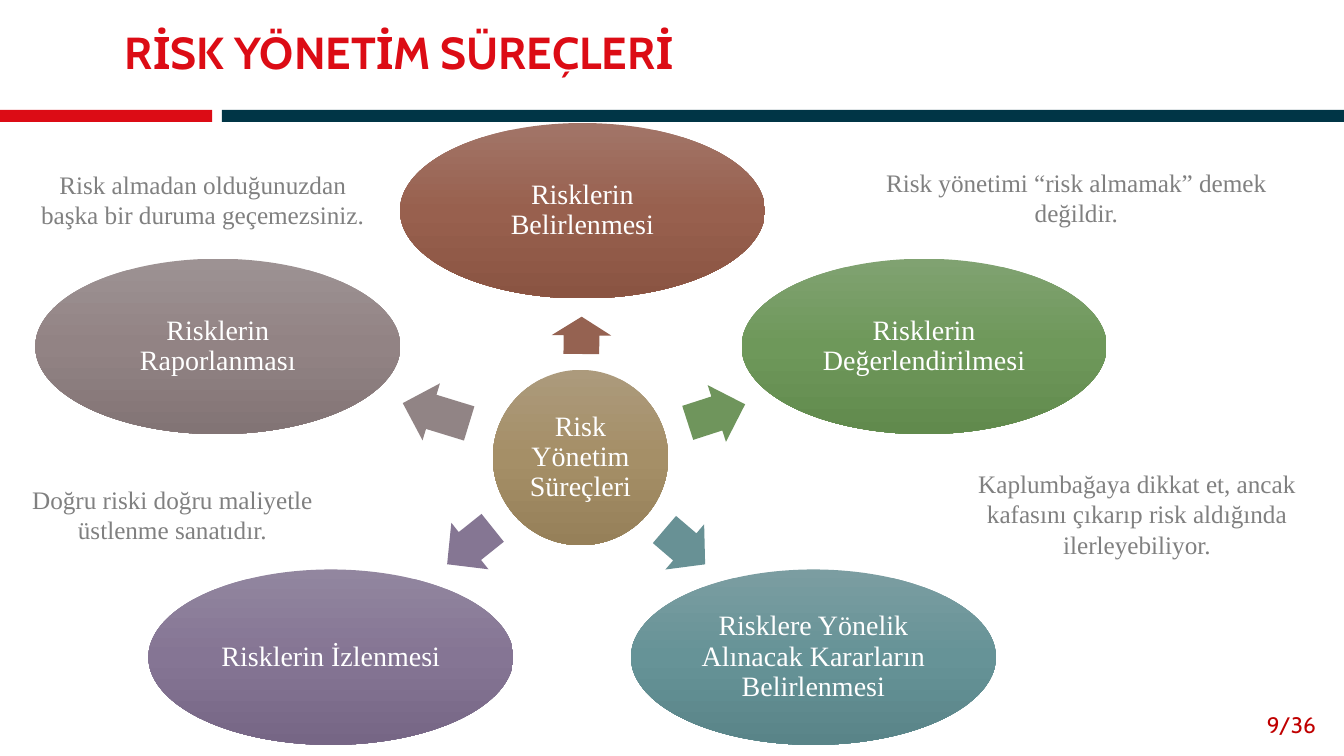
import copy
import math
from dataclasses import dataclass

import pptx
import pptx.dml.color
import pptx.enum.shapes
import pptx.enum.text
import pptx.oxml.ns
import pptx.util

Cm = pptx.util.Cm
RGBColor = pptx.dml.color.RGBColor
Shape = pptx.enum.shapes.MSO_SHAPE
Align = pptx.enum.text.PP_ALIGN
Anchor = pptx.enum.text.MSO_ANCHOR

RED = RGBColor(0xDC, 0x0C, 0x15)
DARK_RED = RGBColor(0xC0, 0x00, 0x00)
NAVY = RGBColor(0x00, 0x35, 0x46)
GRAY = RGBColor(0x80, 0x80, 0x80)
WHITE = RGBColor(0xFF, 0xFF, 0xFF)
GOLD = (RGBColor(0xAC, 0x9A, 0x7C), RGBColor(0xA5, 0x8F, 0x67), RGBColor(0x96, 0x80, 0x59))
BROWN = (RGBColor(0xA2, 0x75, 0x68), RGBColor(0x98, 0x60, 0x4E), RGBColor(0x8A, 0x54, 0x42))
GREEN = (RGBColor(0x80, 0xA2, 0x71), RGBColor(0x6E, 0x98, 0x5A), RGBColor(0x61, 0x8A, 0x4D))
TEAL = (RGBColor(0x7B, 0x9D, 0xA1), RGBColor(0x66, 0x93, 0x97), RGBColor(0x59, 0x84, 0x88))
PURPLE = (RGBColor(0x92, 0x86, 0x9F), RGBColor(0x85, 0x75, 0x94), RGBColor(0x76, 0x66, 0x85))
TAUPE = (RGBColor(0x9D, 0x92, 0x93), RGBColor(0x92, 0x83, 0x84), RGBColor(0x82, 0x74, 0x75))
ARROW_BROWN = RGBColor(0x95, 0x62, 0x51)
ARROW_GREEN = RGBColor(0x6F, 0x95, 0x5C)
ARROW_TEAL = RGBColor(0x68, 0x91, 0x95)
ARROW_PURPLE = RGBColor(0x85, 0x76, 0x93)
ARROW_TAUPE = RGBColor(0x91, 0x84, 0x85)

SERIF = "Times New Roman"
SANS = "Cabin"
OVAL_HEIGHT = 4.42
STAGE_WIDTH = 9.2
ARROW_WIDTH = 1.5


@dataclass(frozen=True)
class Oval:
    text: str
    x: float
    y: float
    width: float
    gradient: tuple[RGBColor, RGBColor, RGBColor]


@dataclass(frozen=True)
class Stage:
    oval: Oval
    arrow_color: RGBColor
    arrow_length: float
    arrow_distance: float


@dataclass(frozen=True)
class Note:
    text: str
    left: float
    top: float
    width: float
    height: float


HUB = Oval("Risk Yönetim Süreçleri", 14.63, 11.53, OVAL_HEIGHT, GOLD)
STAGES = [
    Stage(Oval("Risklerin Belirlenmesi", 14.68, 5.31, STAGE_WIDTH, BROWN),
          ARROW_BROWN, 0.94, 3.08),
    Stage(Oval("Risklerin Değerlendirilmesi", 23.29, 8.73, STAGE_WIDTH, GREEN),
          ARROW_GREEN, 1.52, 3.6),
    Stage(Oval("Risklere Yönelik Alınacak Kararların Belirlenmesi", 20.5, 16.56, STAGE_WIDTH, TEAL),
          ARROW_TEAL, 1.35, 3.46),
    Stage(Oval("Risklerin İzlenmesi", 8.34, 16.56, STAGE_WIDTH, PURPLE),
          ARROW_PURPLE, 1.47, 3.57),
    Stage(Oval("Risklerin Raporlanması", 5.49, 8.73, STAGE_WIDTH, TAUPE),
          ARROW_TAUPE, 1.75, 3.81),
]
NOTES = [
    Note("Risk yönetimi “risk almamak” demek değildir.", 21.79, 4.09, 10.67, 1.8),
    Note("Doğru riski doğru maliyetle üstlenme sanatıdır.", -0.43, 12.07, 9.55, 1.8),
    Note("Risk almadan olduğunuzdan başka bir duruma geçemezsiniz.", 0.69, 4.14, 8.84, 1.8),
    Note("Kaplumbağaya dikkat et, ancak kafasını çıkarıp risk aldığında ilerleyebiliyor.",
         23.88, 11.68, 9.55, 2.57),
]


def write_text(frame, text: str, *, size: float, color: RGBColor, font: str = SERIF,
               bold: bool = False, align=Align.CENTER, anchor=Anchor.TOP,
               line_spacing: float = 1.0) -> None:
    frame.word_wrap = True
    frame.vertical_anchor = anchor
    paragraph = frame.paragraphs[0]
    paragraph.alignment = align
    paragraph.line_spacing = line_spacing
    run = paragraph.add_run()
    run.text = text
    run.font.name = font
    run.font.size = pptx.util.Pt(size)
    run.font.bold = bold
    run.font.color.rgb = color


def add_text(slide, text: str, left: float, top: float, width: float, height: float,
             **text_format) -> None:
    box = slide.shapes.add_textbox(Cm(left), Cm(top), Cm(width), Cm(height))
    write_text(box.text_frame, text, **text_format)


def add_plain_shape(slide, kind, left: float, top: float, width: float, height: float):
    shape = slide.shapes.add_shape(kind, Cm(left), Cm(top), Cm(width), Cm(height))
    shape.shadow.inherit = False
    shape.line.fill.background()
    return shape


def add_bar(slide, left: float, width: float, color: RGBColor) -> None:
    bar = add_plain_shape(slide, Shape.RECTANGLE, left, 2.77, width, 0.3)
    bar.fill.solid()
    bar.fill.fore_color.rgb = color


def add_oval(slide, oval: Oval) -> None:
    ellipse = add_plain_shape(slide, Shape.OVAL, oval.x - oval.width / 2,
                              oval.y - OVAL_HEIGHT / 2, oval.width, OVAL_HEIGHT)
    ellipse.fill.gradient()
    ellipse.fill.gradient_angle = 270
    stop_list = next(ellipse.element.iter(pptx.oxml.ns.qn("a:gsLst")))
    stop_list.insert(1, copy.deepcopy(stop_list[0]))
    for stop, color, position in zip(ellipse.fill.gradient_stops, oval.gradient, (0, 0.5, 1)):
        stop.color.rgb = color
        stop.position = position
    frame = ellipse.text_frame
    frame.margin_left = frame.margin_right = frame.margin_top = frame.margin_bottom = Cm(0.08)
    write_text(frame, oval.text, size=20, color=WHITE, anchor=Anchor.MIDDLE, line_spacing=0.9)


def add_stage_arrow(slide, stage: Stage) -> None:
    angle = math.atan2(stage.oval.y - HUB.y, stage.oval.x - HUB.x)
    x = HUB.x + stage.arrow_distance * math.cos(angle)
    y = HUB.y + stage.arrow_distance * math.sin(angle)
    arrow = add_plain_shape(slide, Shape.RIGHT_ARROW, x - stage.arrow_length / 2,
                            y - ARROW_WIDTH / 2, stage.arrow_length, ARROW_WIDTH)
    arrow.adjustments[0] = 0.6
    arrow.adjustments[1] = 0.5
    arrow.rotation = math.degrees(angle) % 360
    arrow.fill.solid()
    arrow.fill.fore_color.rgb = stage.arrow_color


def main() -> None:
    presentation = pptx.Presentation()
    presentation.slide_width = Cm(33.87)
    presentation.slide_height = Cm(19.05)
    slide = presentation.slides.add_slide(presentation.slide_layouts[6])

    add_bar(slide, 0, 5.35, RED)
    add_bar(slide, 5.59, 28.28, NAVY)
    add_oval(slide, HUB)
    for stage in STAGES:
        add_stage_arrow(slide, stage)
        add_oval(slide, stage.oval)

    add_text(slide, "RİSK YÖNETİM SÜREÇLERİ", 2.9, 0.36, 30.5, 2.03, size=32, color=RED,
             font=SANS, bold=True, align=Align.LEFT, anchor=Anchor.MIDDLE, line_spacing=0.9)
    for note in NOTES:
        add_text(slide, note.text, note.left, note.top, note.width, note.height,
                 size=18, color=GRAY)
    add_text(slide, "9/36", 31.12, 17.75, 2.29, 1.02, size=16, color=DARK_RED,
             font=SANS, align=Align.RIGHT, anchor=Anchor.MIDDLE)

    presentation.save("out.pptx")


if __name__ == "__main__":
    main()
